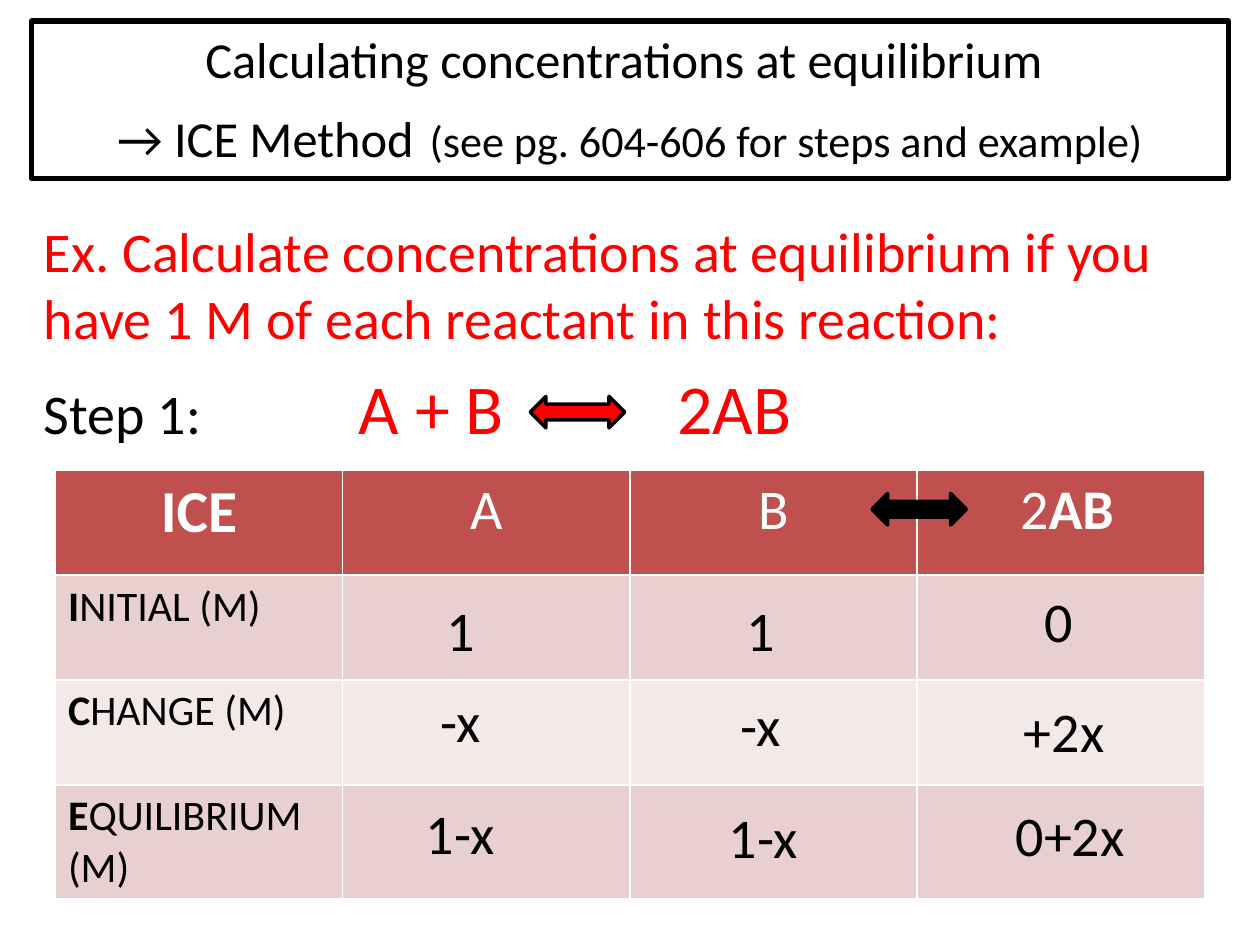
from lxml import etree
from pptx import Presentation
from pptx.dml.color import RGBColor
from pptx.enum.shapes import MSO_SHAPE
from pptx.enum.text import MSO_ANCHOR, MSO_AUTO_SIZE, PP_ALIGN
from pptx.oxml.ns import qn
from pptx.util import Pt

CENTER, MIDDLE = PP_ALIGN.CENTER, MSO_ANCHOR.MIDDLE
NO_AUTOFIT = MSO_AUTO_SIZE.NONE
DOUBLE_ARROW = MSO_SHAPE.LEFT_RIGHT_ARROW

FONT = "Calibri"
BLACK = RGBColor(0x00, 0x00, 0x00)
WHITE = RGBColor(0xFF, 0xFF, 0xFF)
RED = RGBColor(0xFF, 0x00, 0x00)
HEADER_RED = RGBColor(0xC0, 0x50, 0x4D)
BAND_DARK = RGBColor(0xE8, 0xD0, 0xD0)
BAND_LIGHT = RGBColor(0xF4, 0xE9, 0xE9)


def add_run(paragraph, text, size, color=BLACK, bold=False):
    run = paragraph.add_run()
    run.text = text
    run.font.name = FONT
    run.font.size = Pt(size)
    run.font.bold = bold
    run.font.color.rgb = color


def add_tab_stops(paragraph, positions):
    tabs = etree.SubElement(paragraph._p.get_or_add_pPr(), qn("a:tabLst"))
    for position in positions:
        etree.SubElement(tabs, qn("a:tab"), pos=str(Pt(position)), algn="l")


def fill_title(slide, left, top, width, height):
    title = slide.shapes.title
    title.left, title.top = Pt(left), Pt(top)
    title.width, title.height = Pt(width), Pt(height)
    title.line.color.rgb = BLACK
    title.line.width = Pt(3)
    frame = title.text_frame
    frame.auto_size = NO_AUTOFIT
    frame.vertical_anchor = MIDDLE

    topic, method = frame.paragraphs[0], frame.add_paragraph()
    add_run(topic, "Calculating concentrations at equilibrium ", 28.8)
    add_run(method, "→ ICE Method", 28.8)
    add_run(method, " ", 39.6)
    add_run(method, "(see pg. 604-606 for steps and example)", 25.2)
    for line in (topic, method):
        line.alignment = CENTER
        line.space_before = Pt(0)


def add_double_arrow(slide, left, top, color):
    arrow = slide.shapes.add_shape(DOUBLE_ARROW, Pt(left), Pt(top), Pt(54), Pt(18))
    arrow.shadow.inherit = False
    arrow.fill.solid()
    arrow.fill.fore_color.rgb = color
    arrow.line.color.rgb = BLACK
    arrow.line.width = Pt(2)


def add_problem(slide, left, top, width, height):
    problem = slide.shapes.add_textbox(Pt(left), Pt(top), Pt(width), Pt(height))
    frame = problem.text_frame
    frame.word_wrap = True
    add_run(frame.paragraphs[0],
            "Ex. Calculate concentrations at equilibrium if you have 1 M "
            "of each reactant in this reaction:", 32, RED)

    # First step, with the reaction set on tab stops
    reaction = frame.add_paragraph()
    reaction.space_before = Pt(8)
    add_tab_stops(reaction, (180, 362))
    add_run(reaction, "Step 1:\t", 32)
    add_run(reaction, "A + B\t2AB", 40, RED)
    add_double_arrow(slide, left + 285, top + 106.5, RED)


def add_value(slide, text, left, top):
    value = slide.shapes.add_textbox(Pt(left), Pt(top), Pt(126), Pt(46))
    value.text_frame.word_wrap = True
    paragraph = value.text_frame.paragraphs[0]
    paragraph.alignment = CENTER
    add_run(paragraph, text + " ", 32)


def add_ice_table(slide, left, top, width, height):
    row_heights = (60, 60, 60, 65)
    table = slide.shapes.add_table(4, 4, Pt(left), Pt(top), Pt(width), Pt(height)).table
    for column in table.columns:
        column.width = Pt(width / 4)
    for row, row_height in zip(table.rows, row_heights):
        row.height = Pt(row_height)

    # Cell fills: header, then alternating bands
    for row, color in zip(table.rows, (HEADER_RED, BAND_DARK, BAND_LIGHT, BAND_DARK)):
        for cell in row.cells:
            cell.fill.solid()
            cell.fill.fore_color.rgb = color

    # Header: (regular part, bold part, size)
    headers = (("", "ICE", 34), ("A", "", 32), ("B", "", 32), (" 2", "AB", 32))
    for cell, (regular, bold, size) in zip(table.rows[0].cells, headers):
        paragraph = cell.text_frame.paragraphs[0]
        paragraph.alignment = CENTER
        if regular:
            add_run(paragraph, regular, size, WHITE)
        if bold:
            add_run(paragraph, bold, size, WHITE, bold=True)

    # Row labels with a bold initial
    for row, label in enumerate(("INITIAL (M)", "CHANGE (M)", "EQUILIBRIUM (M)"), 1):
        paragraph = table.cell(row, 0).text_frame.paragraphs[0]
        add_run(paragraph, label[0], 24, bold=True)
        add_run(paragraph, label[1:], 24)

    add_double_arrow(slide, left + 466.5, top + 13.5, BLACK)

    # Values laid over the cells: (text, left, top) within the table
    values = (
        ("1", 172, 68), ("1", 343.5, 68.5), ("0", 514, 63),
        ("-x", 172, 120.5), ("-x", 343.5, 122.5), ("+2x", 517, 126),
        ("1-x", 172, 184.5), ("1-x", 345, 186.5), ("0+2x", 520.5, 185.5),
    )
    for text, x, y in values:
        add_value(slide, text, left + x, top + y)


def main():
    presentation = Presentation()
    presentation.slide_width, presentation.slide_height = Pt(720), Pt(540)
    title_only = presentation.slide_layouts[5]
    slide = presentation.slides.add_slide(title_only)
    fill_title(slide, 18, 12, 684, 90)
    add_problem(slide, 18, 120, 684, 390)
    add_ice_table(slide, 31.7, 268.5, 656.6, 245)
    presentation.save("out.pptx")


if __name__ == "__main__":
    main()
